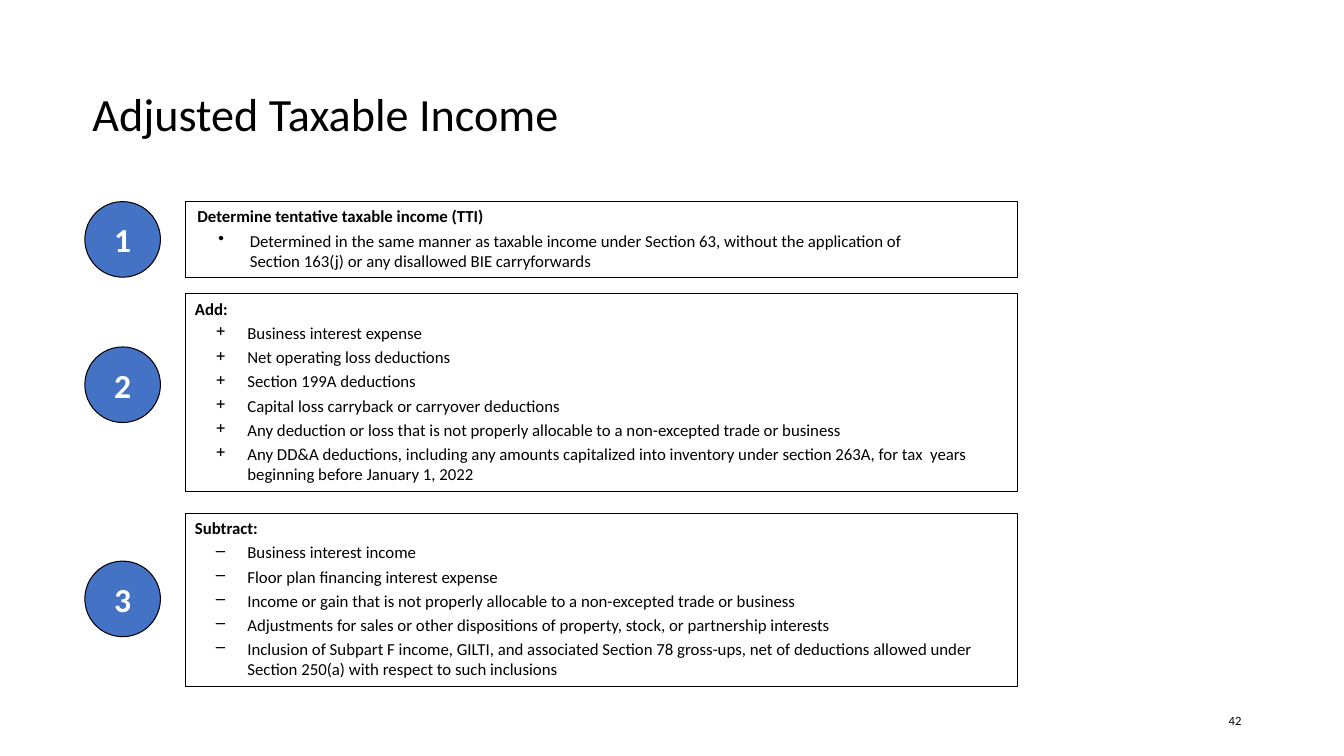
from lxml.etree import SubElement as Sub
from pptx import Presentation
from pptx.dml.color import RGBColor as Rgb
from pptx.enum.shapes import MSO_SHAPE as Kind
from pptx.enum.text import MSO_ANCHOR as Anchor, MSO_AUTO_SIZE as Fit, PP_ALIGN as Align
from pptx.oxml.ns import qn
from pptx.util import Inches, Pt

COLS, ROWS = 160, 90


def paint(target, tint):
    target.rgb = Rgb.from_string(tint)


def write(para, text, size=12, tint="000000", bold=False, align=Align.LEFT, gap=0):
    para.alignment = align
    para.space_before = Pt(gap)
    run = para.add_run()
    run.text = text
    font = run.font
    font.name, font.size, font.bold = "Calibri", Pt(size), bold
    paint(font.color, tint)


class Deck:
    blue, black, white = "4472C4", "000000", "FFFFFF"

    def __init__(self):
        self.prs = Presentation()
        self.prs.slide_width, self.prs.slide_height = Inches(13.33), Inches(7.5)
        self.slide = self.prs.slides.add_slide(self.prs.slide_layouts[5])

    def col(self, n):
        return round(self.prs.slide_width * n / COLS)

    def row(self, n):
        return round(self.prs.slide_height * n / ROWS)

    def place(self, x, y, w, h):
        return self.col(x), self.row(y), self.col(w), self.row(h)

    def frame(self, shape, anchor=Anchor.MIDDLE, left=0, top=0, right=0):
        tf = shape.text_frame
        tf.word_wrap, tf.auto_size = True, Fit.NONE
        tf.vertical_anchor = anchor
        tf.margin_left, tf.margin_right = self.col(left), self.col(right)
        tf.margin_top, tf.margin_bottom = self.row(top), 0
        return tf

    def title(self, text, *spot):
        head = self.slide.shapes.title
        head.left, head.top, head.width, head.height = self.place(*spot)
        write(self.frame(head).paragraphs[0], text, size=33)

    def label(self, text, *spot, **style):
        box = self.slide.shapes.add_textbox(*self.place(*spot))
        write(self.frame(box, right=1.2).paragraphs[0], text, **style)

    def shape(self, kind, spot, fill=None):
        item = self.slide.shapes.add_shape(kind, *self.place(*spot))
        item.shadow.inherit = False
        if fill:
            item.fill.solid()
            paint(item.fill.fore_color, fill)
        else:
            item.fill.background()
        paint(item.line.color, self.black)
        item.line.width = Pt(0.75)
        return item

    def badge(self, text, *spot):
        disc = self.shape(Kind.OVAL, spot, self.blue)
        write(self.frame(disc).paragraphs[0], text, size=24, tint=self.white,
              bold=True, align=Align.CENTER)

    def bullet(self, para, mark):
        props = para._p.get_or_add_pPr()
        props.set("marL", str(self.col(6.25)))
        props.set("indent", str(-self.col(3.75)))
        Sub(props, qn("a:buChar")).set("char", mark)

    def panel(self, head, mark, items, spot, left, right):
        box = self.shape(Kind.RECTANGLE, spot)
        tf = self.frame(box, Anchor.TOP, left, 0.55, right)
        write(tf.paragraphs[0], head, bold=True)
        for item in items:
            para = tf.add_paragraph()
            write(para, item, gap=2.9)
            self.bullet(para, mark)


# Steps: heading, bullet mark, items, panel top and height, badge top, insets
STEPS = [
    ("Determine tentative taxable income (TTI)", "•", [
        "Determined in the same manner as taxable income under Section 63, "
        "without the application of Section 163(j) or any disallowed BIE carryforwards",
    ], 24, 9, 24, 1.4, 7.3),
    ("Add:", "+", [
        "Business interest expense",
        "Net operating loss deductions",
        "Section 199A deductions",
        "Capital loss carryback or carryover deductions",
        "Any deduction or loss that is not properly allocable to a "
        "non-excepted trade or business",
        "Any DD&A deductions, including any amounts capitalized into inventory "
        "under section 263A, for tax  years beginning before January 1, 2022",
    ], 35, 23.5, 41.3, 1.1, 0),
    ("Subtract:", "–", [
        "Business interest income",
        "Floor plan financing interest expense",
        "Income or gain that is not properly allocable to a "
        "non-excepted trade or business",
        "Adjustments for sales or other dispositions of property, stock, "
        "or partnership interests",
        "Inclusion of Subpart F income, GILTI, and associated Section 78 gross-ups, "
        "net of deductions allowed under Section 250(a) with respect to such inclusions",
    ], 61.1, 20.6, 66.8, 1.1, 1.5),
]


def main():
    deck = Deck()
    deck.title("Adjusted Taxable Income", 11, 4.8, 138, 17.4)

    # Numbered steps
    for num, (head, mark, items, top, tall, disc, left, right) in enumerate(STEPS, 1):
        deck.panel(head, mark, items, (22.1, top, 99, tall), left, right)
        deck.badge(str(num), 10.1, disc, 9, 9)

    # Page number
    deck.label("42", 113, 83.4, 36, 4.8, size=9, align=Align.RIGHT)
    deck.prs.save("out.pptx")


if __name__ == "__main__":
    main()
